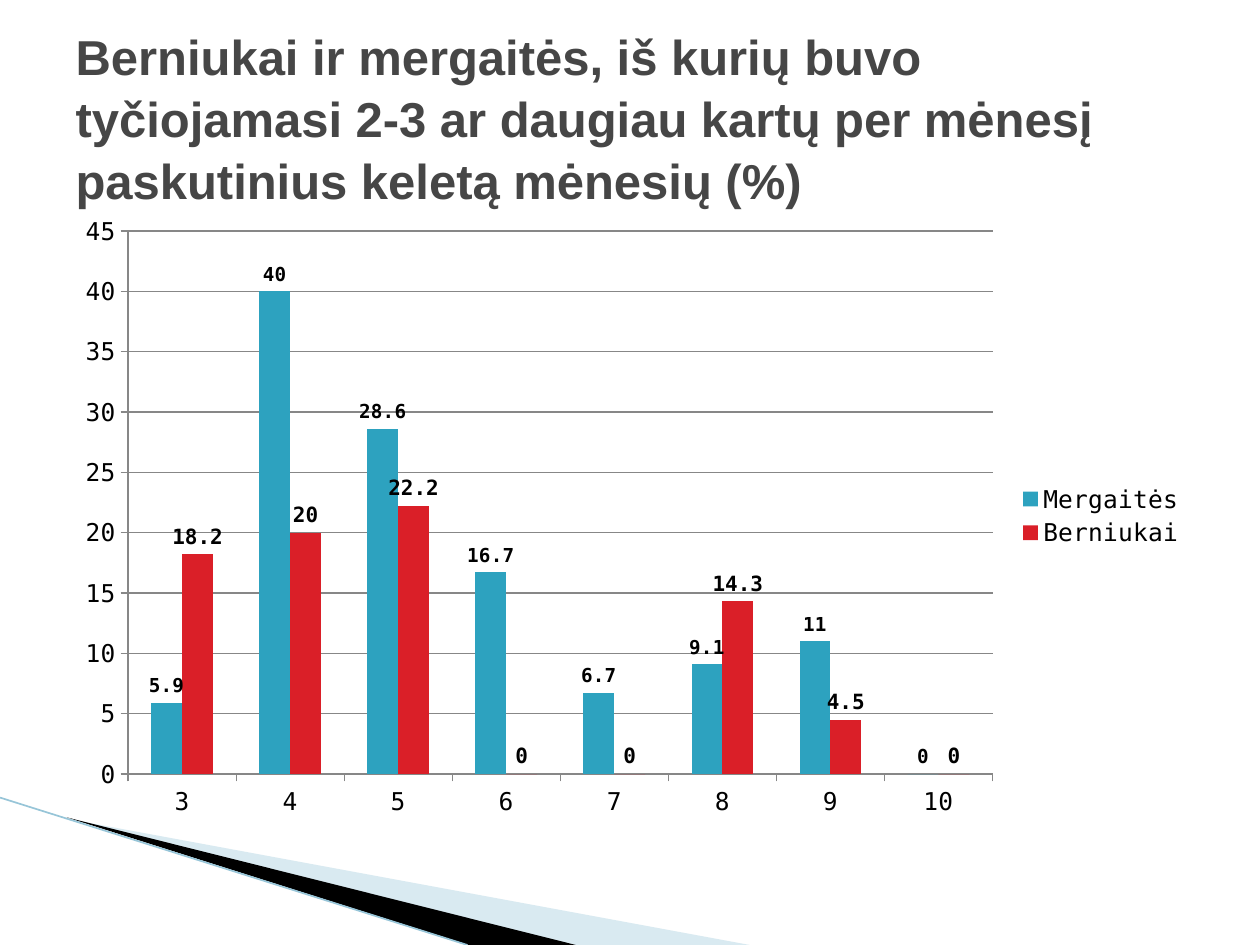
"""Build a slide with a clustered column chart on bullying by class and gender."""
from dataclasses import dataclass

from lxml import etree
from pptx import Presentation
from pptx import util as u
from pptx.chart.data import CategoryChartData
from pptx.dml.color import RGBColor
from pptx.enum import chart as ch, text
from pptx.oxml.ns import qn

W, H = u.Inches(10), u.Inches(7.5)
COLORS = {"title": "464646", "text": "000000", "girls": "2DA2BF", "boys": "DA1F28",
          "grid": "878787", "pale": "A0CBDC", "dark": "000000", "edge": "97C5D8"}
MONO = "DejaVu Sans Mono"


@dataclass
class Wedge:
    points: list[tuple[float, float]]
    color: str
    alpha: int = 100


@dataclass
class Series:
    name: str
    values: list[float]
    color: str
    label_size: int


WEDGES = [
    Wedge([(0.055, 0.867), (0.595, 1), (0.456, 1)], "pale", 40),
    Wedge([(0.053, 0.865), (0.457, 1), (0.372, 1)], "dark"),
]
SERIES = [
    Series("Mergaitės", [5.9, 40, 28.6, 16.7, 6.7, 9.1, 11, 0], "girls", 11),
    Series("Berniukai", [18.2, 20, 22.2, 0, 0, 14.3, 4.5, 0], "boys", 12),
]


def rgb(key: str) -> RGBColor:
    return RGBColor.from_string(COLORS[key])


def at(x: float, y: float) -> tuple[int, int]:
    return round(x * W), round(y * H)


def add_wedge(s, wedge: Wedge) -> None:
    start, *rest = [at(*point) for point in wedge.points]
    builder = s.shapes.build_freeform(*start)
    builder.add_line_segments(rest, close=True)
    sp = builder.convert_to_shape()
    sp.shadow.inherit = False
    sp.line.fill.background()
    sp.fill.solid()
    sp.fill.fore_color.rgb = rgb(wedge.color)
    if wedge.alpha < 100:
        color = sp.element.spPr.find(qn("a:solidFill"))[0]
        etree.SubElement(color, qn("a:alpha"), val=str(wedge.alpha * 1000))


def add_edge(s) -> None:
    line = s.shapes.add_connector(1, *at(0, 0.844), *at(0.371, 1))
    line.line.color.rgb = rgb("edge")
    line.line.width = u.Pt(0.95)
    etree.SubElement(line.element.spPr, qn("a:effectLst"))


def set_title(s, words: str) -> None:
    title = s.shapes.title
    title.left, title.top = at(0.05, 0.04)
    title.width, title.height = at(0.9, 1 / 6)
    tf = title.text_frame
    tf.text = words
    tf.word_wrap = True
    tf.auto_size = text.MSO_AUTO_SIZE.NONE
    tf.vertical_anchor = text.MSO_ANCHOR.MIDDLE
    p = tf.paragraphs[0]
    p.alignment = text.PP_ALIGN.LEFT
    p.line_spacing = 1.05
    p.font.name, p.font.size, p.font.bold = "Arial", u.Pt(28), True
    p.font.color.rgb = rgb("title")


def style_axis(axis) -> None:
    axis.major_tick_mark = ch.XL_TICK_MARK.OUTSIDE
    axis.minor_tick_mark = ch.XL_TICK_MARK.NONE
    axis.tick_labels.font.size = u.Pt(14)
    axis.format.line.color.rgb = rgb("grid")


def add_columns(s) -> None:
    data = CategoryChartData()
    data.categories = [str(n) for n in range(3, 11)]
    for series in SERIES:
        data.add_series(series.name, series.values)
    chart = s.shapes.add_chart(ch.XL_CHART_TYPE.COLUMN_CLUSTERED, *at(0.05, 0.216),
                               *at(0.9, 0.66), data).chart
    chart.has_title = False
    chart.font.name, chart.font.size = MONO, u.Pt(18)
    chart.font.color.rgb = rgb("text")
    chart.has_legend = True
    chart.legend.position = ch.XL_LEGEND_POSITION.RIGHT
    chart.legend.include_in_layout = False
    chart.legend.font.size = u.Pt(14)
    style_axis(chart.category_axis)
    axis = chart.value_axis
    style_axis(axis)
    axis.minimum_scale, axis.maximum_scale, axis.major_unit = 0, 45, 5
    axis.has_major_gridlines = True
    axis.major_gridlines.format.line.color.rgb = rgb("grid")
    plot = chart.plots[0]
    plot.gap_width, plot.overlap, plot.vary_by_categories = 150, 0, False
    for series, bars in zip(SERIES, plot.series):
        bars.format.fill.solid()
        bars.format.fill.fore_color.rgb = rgb(series.color)
        labels = bars.data_labels
        labels.show_value = True
        labels.position = ch.XL_LABEL_POSITION.OUTSIDE_END
        labels.font.size, labels.font.bold = u.Pt(series.label_size), True


def main() -> None:
    prs = Presentation()
    prs.slide_width, prs.slide_height = W, H
    s = prs.slides.add_slide(prs.slide_layouts[5])
    for wedge in WEDGES:
        add_wedge(s, wedge)
    add_edge(s)
    add_columns(s)
    set_title(s, "Berniukai ir mergaitės, iš kurių buvo tyčiojamasi 2-3 ar daugiau "
                 "kartų per mėnesį paskutinius keletą mėnesių (%)")
    prs.save("out.pptx")


if __name__ == "__main__":
    main()
